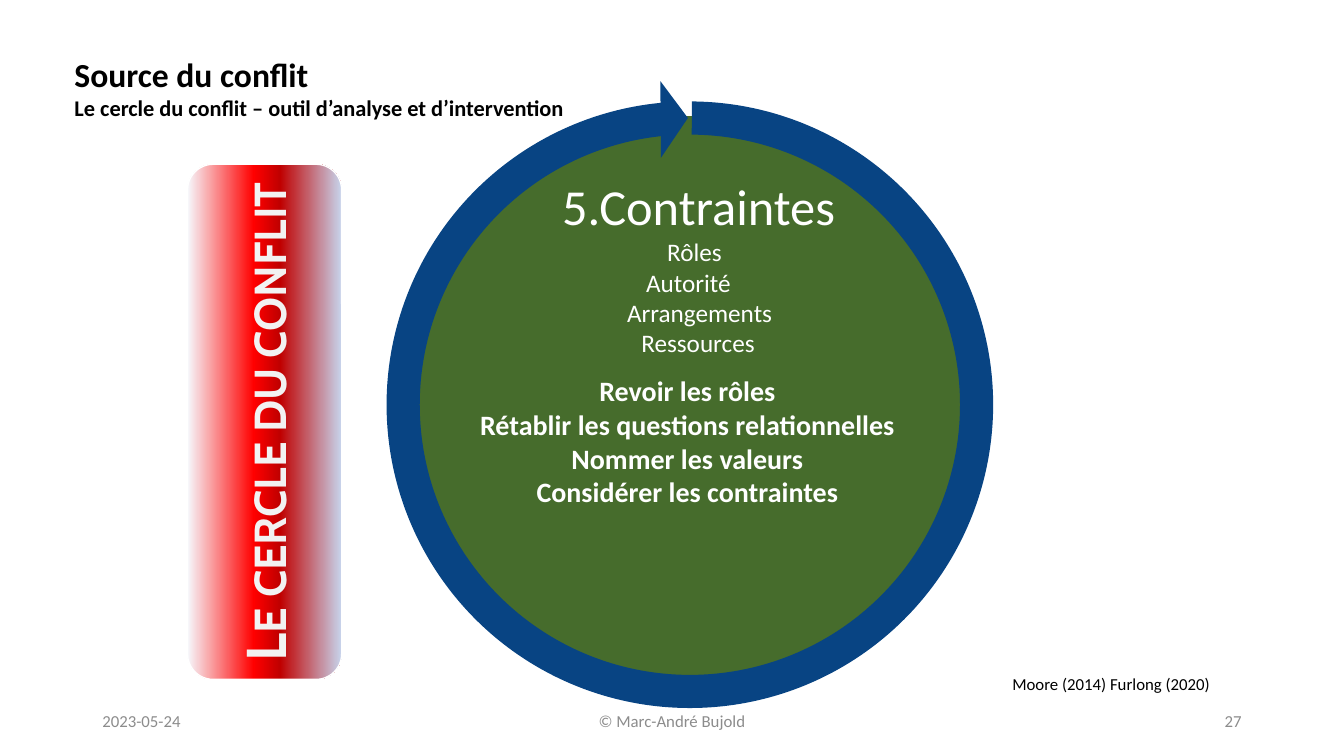
from lxml import etree
from pptx import Presentation
from pptx.dml.color import RGBColor
from pptx.enum.shapes import MSO_SHAPE
from pptx.enum.text import MSO_ANCHOR, MSO_AUTO_SIZE, PP_ALIGN
from pptx.oxml.ns import qn
from pptx.util import Pt

LEFT, CENTER, RIGHT = PP_ALIGN.LEFT, PP_ALIGN.CENTER, PP_ALIGN.RIGHT
TOP, MIDDLE = MSO_ANCHOR.TOP, MSO_ANCHOR.MIDDLE
COLORS = {
    "green": "466C2C", "blue": "084483", "white": "FFFFFF", "black": "000000",
    "gray": "8C8C8C", "light": "F2F2F2",
}
BANNER_STOPS = [(0, "F6F8FC"), (43, "FF0000"), (60, "C00000"), (100, "C7D5ED")]


def write(box, lines, color, align=LEFT, anchor=TOP, font="Calibri"):
    """Fill a shape with one paragraph per (text, size, bold, indent) line."""
    frame = box.text_frame
    frame.word_wrap = True
    frame.auto_size = MSO_AUTO_SIZE.NONE
    frame.vertical_anchor = anchor
    for number, (text, size, bold, indent) in enumerate(lines):
        para = frame.paragraphs[0] if number == 0 else frame.add_paragraph()
        para.alignment = align
        para.space_before = Pt(0)
        properties = para._p.get_or_add_pPr()
        properties.set("marL", str(Pt(indent)))
        properties.set("indent", "0")
        etree.SubElement(properties, qn("a:buNone"))
        span = para.add_run()
        span.text = text
        span.font.name = font
        span.font.size = Pt(size)
        span.font.bold = bold
        span.font.color.rgb = RGBColor.from_string(COLORS[color])


def place(shape, left, top, width, height):
    shape.left, shape.top = Pt(left), Pt(top)
    shape.width, shape.height = Pt(width), Pt(height)


deck = Presentation()
deck.slide_width, deck.slide_height = Pt(960), Pt(540)
slide = deck.slides.add_slide(deck.slide_layouts[1])
shapes = slide.shapes
title, actions = shapes.title, slide.placeholders[1]

# Circle and the arrow running around it
disc = shapes.add_shape(MSO_SHAPE.OVAL, Pt(285), Pt(83), Pt(413), Pt(413))
ring = shapes.add_shape(MSO_SHAPE.CIRCULAR_ARROW, Pt(260.6), Pt(56.9), Pt(464.4), Pt(464.4))
for number, value in enumerate([0.051, 3.275, 158.489, 162.236, 0.059]):
    ring.adjustments[number] = value
for shape, color in [(disc, "green"), (ring, "blue")]:
    shape.shadow.inherit = False
    shape.fill.solid()
    shape.fill.fore_color.rgb = RGBColor.from_string(COLORS[color])
    shape.line.fill.background()

# Vertical banner
banner = shapes.add_shape(MSO_SHAPE.ROUNDED_RECTANGLE, Pt(5), Pt(246.2), Pt(368), Pt(110.2))
banner.rotation = 270
banner.shadow.inherit = False
banner.line.color.rgb = RGBColor.from_string(COLORS["white"])
banner.line.width = Pt(1)
banner.fill.gradient()
banner.fill.gradient_angle = 270
stop_list = banner._element.spPr.find(".//" + qn("a:gsLst"))
for stop in list(stop_list):
    stop_list.remove(stop)
for position, color in BANNER_STOPS:
    stop = etree.SubElement(stop_list, qn("a:gs"), pos=str(position * 1000))
    etree.SubElement(stop, qn("a:srgbClr"), val=color)
write(banner, [("Le cercle du conflit", 40, True, 0)], "light", CENTER, MIDDLE, "Cabin")
banner_para = banner.text_frame.paragraphs[0]
banner_para.space_after = Pt(12)
banner_para.runs[0].font._element.set("cap", "small")

# Placeholders, brought in front of the circle
for placeholder in (actions, title):
    shapes._spTree.append(placeholder._element)
place(actions, 311, 263.5, 360, 104.4)
write(actions, [(text, 20, True, 0) for text in (
    "Revoir les rôles", "Rétablir les questions relationnelles",
    "Nommer les valeurs", "Considérer les contraintes")], "white", CENTER)
place(title, 46, 34.6, 380, 55.4)
write(title, [
    ("Source du conflit", 24, True, 0),
    ("Le cercle du conflit – outil d’analyse et d’intervention", 16, True, 0),
], "black")

# Remaining texts: position, lines, colour, alignment, anchor
causes = [("Rôles", 75.5), ("Autorité", 60.4), ("Arrangements", 46.8), ("Ressources", 57)]
texts = [
    ((383, 121.6, 232, 51), [("5.Contraintes", 36, False, 0)], "white", CENTER, TOP),
    ((394, 165.5, 187, 96), [(text, 18, False, indent) for text, indent in causes],
     "white", LEFT, TOP),
    ((716, 477.4, 170, 21.6), [("Moore (2014) Furlong (2020)", 12, False, 0)],
     "black", LEFT, TOP),
    ((66, 500.5, 216, 28.8), [("2023-05-24", 12, False, 0)], "gray", LEFT, MIDDLE),
    ((318, 500.5, 324, 28.8), [("© Marc-André Bujold", 12, False, 0)], "gray", CENTER, MIDDLE),
    ((678, 500.5, 216, 28.8), [("27", 12, False, 0)], "gray", RIGHT, MIDDLE),
]
for bounds, lines, color, align, anchor in texts:
    box = shapes.add_textbox(*map(Pt, bounds))
    write(box, lines, color, align, anchor)

deck.save("out.pptx")
